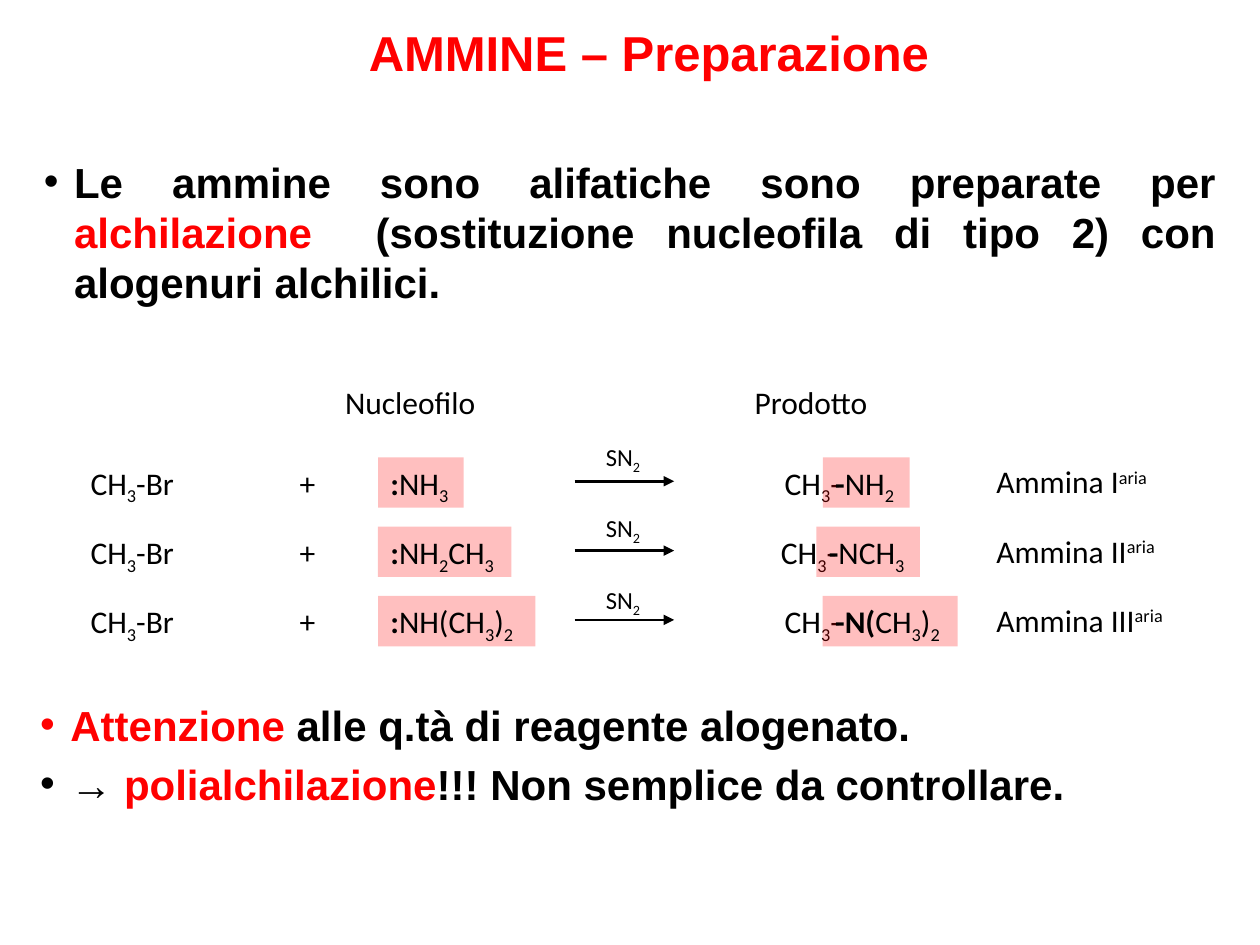
from lxml import etree
from pptx import Presentation
from pptx.dml.color import RGBColor
from pptx.enum import shapes, text
from pptx.oxml import ns
from pptx.util import Inches, Pt

RED = RGBColor(0xFF, 0x00, 0x00)
BLACK = RGBColor(0x00, 0x00, 0x00)

TITLE = "AMMINE – Preparazione"
INTRO = [[
    ("Le ammine sono alifatiche sono preparate per ", BLACK),
    ("alchilazione", RED),
    ("  (sostituzione nucleofila di tipo 2) con alogenuri alchilici.", BLACK),
]]
WARNING = [
    [("Attenzione", RED), (" alle q.tà di reagente alogenato.", BLACK)],
    [("→ ", BLACK), ("polialchilazione", RED),
     ("!!! Non semplice da controllare.", BLACK)],
]

# In formulas, "|" separates runs; "_" lowers, "^" raises and "*" bolds a run.
HEADINGS = [("Nucleofilo", 2.64, 1.25), ("Prodotto", 5.89, 1.11)]
HALIDE = "CH|_3|-Br"
METHYL = "CH|_3|-"
MECHANISM = "SN|_2"
REACTIONS = [
    {"nucleophile": ("*:|NH|_3", 0.68), "methyl_left": 6.13,
     "group": ("*-|NH|_2", 6.53, 0.69), "amine": ("Ammina I|^aria", 1.44)},
    {"nucleophile": ("*:|NH|_2|CH|_3", 1.06), "methyl_left": 6.10,
     "group": ("*-|NCH|_3", 6.48, 0.82), "amine": ("Ammina II|^aria", 1.50)},
    {"nucleophile": ("*:|NH(CH|_3|)|_2", 1.25), "methyl_left": 6.13,
     "group": ("*-N(|CH|_3|)|_2", 6.53, 1.07), "amine": ("Ammina III|^aria", 1.57)},
]
FIRST_ROW, ROW_PITCH, ROW_HEIGHT = 3.63, 0.55, 0.4
FIRST_MECHANISM, MECHANISM_PITCH = 3.46, 0.565
ARROW_LEFT, ARROW_RIGHT, ARROW_DROP = 4.56, 5.35, 0.19
BASELINES = {"_": "-25000", "^": "30000"}


def style(run, face, size, color, bold=False):
    run.font.name = face
    run.font.size = Pt(size)
    run.font.color.rgb = color
    run.font.bold = bold


def add_formula(slide, formula, left, top, width, size=18, height=ROW_HEIGHT,
                highlight=False):
    box = [Inches(v) for v in (left, top, width, height)]
    if highlight:
        label = slide.shapes.add_shape(shapes.MSO_SHAPE.RECTANGLE, *box)
        label.shadow.inherit = False
        label.line.fill.background()
        label.fill.solid()
        label.fill.fore_color.rgb = RED
        tint = label.fill._xPr.find(".//" + ns.qn("a:srgbClr"))
        etree.SubElement(tint, ns.qn("a:alpha"), val="25000")
    else:
        label = slide.shapes.add_textbox(*box)
    frame = label.text_frame
    frame.word_wrap = False
    frame.vertical_anchor = text.MSO_ANCHOR.TOP
    paragraph = frame.paragraphs[0]
    paragraph.alignment = text.PP_ALIGN.LEFT
    for part in formula.split("|"):
        run = paragraph.add_run()
        run.text = part.lstrip("_^*")
        style(run, "Calibri", size, BLACK, part[0] == "*")
        if part[0] in BASELINES:
            run._r.get_or_add_rPr().set("baseline", BASELINES[part[0]])


def add_arrow(slide, y):
    arrow = slide.shapes.add_connector(
        shapes.MSO_CONNECTOR.STRAIGHT,
        Inches(ARROW_LEFT), Inches(y), Inches(ARROW_RIGHT), Inches(y))
    arrow.line.color.rgb = BLACK
    arrow.line.width = Pt(1.5)
    etree.SubElement(arrow.line._get_or_add_ln(), ns.qn("a:tailEnd"), type="triangle")
    etree.SubElement(arrow._element.spPr, ns.qn("a:effectLst"))


def add_bullets(slide, bullets, left, top, width, height):
    frame = slide.shapes.add_textbox(
        *(Inches(v) for v in (left, top, width, height))).text_frame
    frame.word_wrap = True
    for index, parts in enumerate(bullets):
        paragraph = frame.add_paragraph() if index else frame.paragraphs[0]
        paragraph.alignment = text.PP_ALIGN.JUSTIFY
        paragraph.space_before = Pt(4.8)
        properties = paragraph._p.get_or_add_pPr()
        properties.set("marL", str(Inches(0.24)))
        properties.set("indent", str(Inches(-0.24)))
        etree.SubElement(properties, ns.qn("a:buFont"), typeface="Arial")
        etree.SubElement(properties, ns.qn("a:buChar"), char="•")
        for words, color in parts:
            run = paragraph.add_run()
            run.text = words
            style(run, "Arial", 24, color, True)


def main():
    deck = Presentation()
    deck.slide_width, deck.slide_height = Inches(10), Inches(7.5)
    slide = deck.slides.add_slide(deck.slide_layouts[5])

    title = slide.shapes.title
    title.left, title.top = Inches(1.05), Inches(0.13)
    title.width, title.height = Inches(8.2), Inches(0.57)
    title.text_frame.text = TITLE
    title.text_frame.auto_size = text.MSO_AUTO_SIZE.NONE
    title.text_frame.paragraphs[0].alignment = text.PP_ALIGN.CENTER
    style(title.text_frame.paragraphs[0].runs[0], "Arial", 28, RED, True)

    add_bullets(slide, INTRO, 0.25, 1.19, 9.5, 1.31)
    for heading, left, width in HEADINGS:
        add_formula(slide, heading, left, 2.99, width)

    for row, reaction in enumerate(REACTIONS):
        top = FIRST_ROW + row * ROW_PITCH
        nucleophile, nucleophile_width = reaction["nucleophile"]
        group, group_left, group_width = reaction["group"]
        amine, amine_width = reaction["amine"]
        add_formula(slide, HALIDE, 0.62, top, 0.88)
        add_formula(slide, "+", 2.28, top, 0.33)
        add_formula(slide, nucleophile, 3, top, nucleophile_width, highlight=True)
        add_arrow(slide, top + ARROW_DROP)
        add_formula(slide, MECHANISM, 4.71, FIRST_MECHANISM + row * MECHANISM_PITCH,
                    0.48, size=14, height=0.34)
        add_formula(slide, METHYL, reaction["methyl_left"], top, 0.66)
        add_formula(slide, group, group_left, top, group_width, highlight=True)
        add_formula(slide, amine, 7.81, top - 0.01, amine_width)

    add_bullets(slide, WARNING, 0.22, 5.5, 9.5, 0.99)
    deck.save("out.pptx")


if __name__ == "__main__":
    main()
